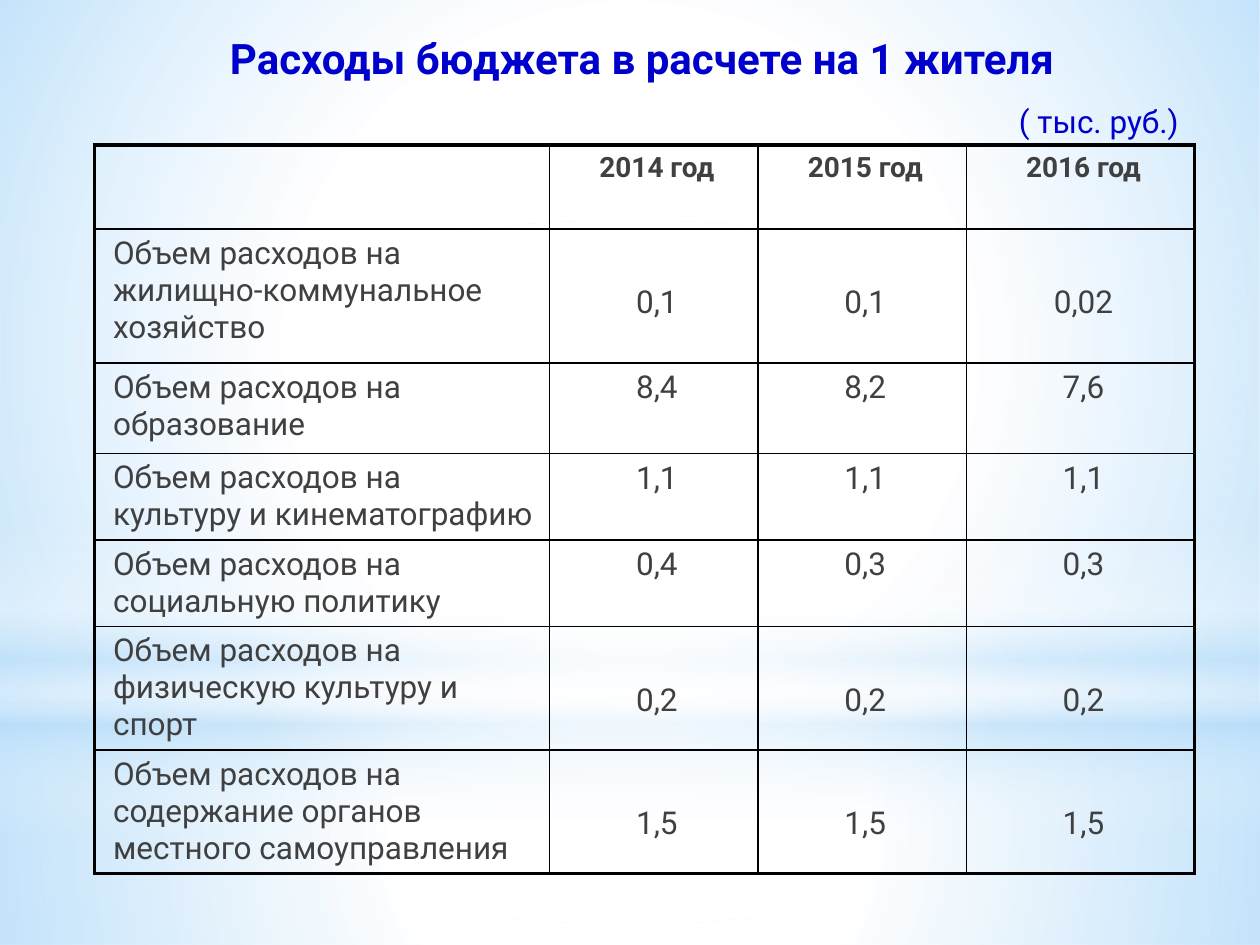
from typing import NamedTuple

from lxml import etree
from pptx import Presentation
from pptx.dml.color import RGBColor
from pptx.enum import shapes, text
from pptx.oxml import ns
from pptx.util import Cm, Pt

FONT = "Roboto"
BLUE = RGBColor(0x00, 0x00, 0xCC)
GREY = RGBColor(0x40, 0x40, 0x40)
BLACK = RGBColor(0x00, 0x00, 0x00)
WHITE = RGBColor(0xFF, 0xFF, 0xFF)
SKY = RGBColor(0xB4, 0xDC, 0xFA)

LEFT, CENTER = text.PP_ALIGN.LEFT, text.PP_ALIGN.CENTER
RECT, OVAL = shapes.MSO_SHAPE.RECTANGLE, shapes.MSO_SHAPE.OVAL
WIDTH, HEIGHT = 25.4, 19.05
HORIZON = 14.17
OUTER, INNER = 2.25, 1


class Stop(NamedTuple):
    position: int
    color: RGBColor
    opacity: int


class Glow(NamedTuple):
    kind: shapes.MSO_SHAPE
    top: float
    height: float
    stops: list[Stop]
    radial: bool = True


class Row(NamedTuple):
    height: float
    label: str
    values: tuple[str, ...]
    value_top: float = 0.13


GLOWS = [
    Glow(RECT, HORIZON, HEIGHT - HORIZON,
         [Stop(0, WHITE, 91), Stop(37, WHITE, 76), Stop(100, SKY, 79)]),
    Glow(RECT, 0, HORIZON,
         [Stop(0, WHITE, 89), Stop(48, WHITE, 62), Stop(100, SKY, 79)]),
    Glow(RECT, 10.46, 6.35,
         [Stop(0, WHITE, 0), Stop(29, WHITE, 30), Stop(45, SKY, 40),
          Stop(55, WHITE, 26), Stop(65, SKY, 60), Stop(100, WHITE, 0)], radial=False),
    Glow(OVAL, 4.45, HORIZON, [Stop(0, WHITE, 100), Stop(56, WHITE, 0)]),
]

COLUMNS = [9.18, 4.2, 4.2, 4.6]
LOWERED = 1.12
ROWS = [
    Row(1.7, "", ("2014 год", "2015 год", "2016 год")),
    Row(2.7, "Объем расходов на жилищно-коммунальное хозяйство", ("0,1", "0,1", "0,02"), LOWERED),
    Row(1.82, "Объем расходов на образование", ("8,4", "8,2", "7,6")),
    Row(1.74, "Объем расходов на культуру и кинематографию", ("1,1", "1,1", "1,1")),
    Row(1.74, "Объем расходов на социальную политику", ("0,4", "0,3", "0,3")),
    Row(2.49, "Объем расходов на физическую культуру и спорт", ("0,2", "0,2", "0,2"), LOWERED),
    Row(2.49, "Объем расходов на содержание органов местного самоуправления",
        ("1,5", "1,5", "1,5"), LOWERED),
]


def write(tf, content: str, *, size: float = 18, color: RGBColor = GREY,
          bold: bool = False, align=LEFT) -> None:
    p = tf.paragraphs[0]
    p.alignment = align
    r = p.add_run()
    r.text = content
    r.font.name, r.font.size, r.font.bold = FONT, Pt(size), bold
    r.font.color.rgb = color


def child(parent, tag: str, **attributes):
    return etree.SubElement(parent, ns.qn(tag), {k: str(v) for k, v in attributes.items()})


def draw_glow(slide, glow: Glow) -> None:
    sp = slide.shapes.add_shape(glow.kind, 0, Cm(glow.top), Cm(WIDTH), Cm(glow.height))
    sp.shadow.inherit = False
    sp.line.fill.background()
    sp.fill.gradient()
    grad = sp.fill._fill._gradFill
    for old in list(grad):
        grad.remove(old)
    stops = child(grad, "a:gsLst")
    for stop in glow.stops:
        gs = child(stops, "a:gs", pos=stop.position * 1000)
        color = child(gs, "a:srgbClr", val=stop.color)
        child(color, "a:alpha", val=stop.opacity * 1000)
    if glow.radial:
        center = child(grad, "a:path", path="circle")
        child(center, "a:fillToRect", l=50000, t=50000, r=50000, b=50000)
    else:
        child(grad, "a:lin", ang=90 * 60000, scaled=0)


def set_borders(cell, **widths: float) -> None:
    """Draw black cell borders; sides must come in the order L, R, T, B."""
    props = cell._tc.get_or_add_tcPr()
    for side, width in widths.items():
        line = child(props, f"a:ln{side}", w=Pt(width))
        child(child(line, "a:solidFill"), "a:srgbClr", val=BLACK)


def draw_table(slide, left: float, top: float) -> None:
    frame = slide.shapes.add_table(len(ROWS), len(COLUMNS), Cm(left), Cm(top),
                                   Cm(sum(COLUMNS)), Cm(sum(r.height for r in ROWS)))
    table = frame.table
    table.first_row = table.horz_banding = False
    for column, width in zip(table.columns, COLUMNS):
        column.width = Cm(width)
    last_row, last_col = len(ROWS) - 1, len(COLUMNS) - 1
    for i, row in enumerate(ROWS):
        table.rows[i].height = Cm(row.height)
        for j, content in enumerate((row.label, *row.values)):
            cell = table.cell(i, j)
            set_borders(cell, L=OUTER if j == 0 else INNER, R=OUTER if j == last_col else INNER,
                        T=OUTER if i == 0 else INNER, B=OUTER if i == last_row else INNER)
            cell.fill.background()
            cell.margin_left = Cm(0.38)
            if j:
                cell.margin_top = Cm(row.value_top)
            if content:
                write(cell.text_frame, content, size=18 if i else 16, bold=i == 0,
                      align=CENTER if j else LEFT)


def main() -> None:
    prs = Presentation()
    prs.slide_width, prs.slide_height = Cm(WIDTH), Cm(HEIGHT)
    s = prs.slides.add_slide(prs.slide_layouts[5])
    s.background.fill.solid()
    s.background.fill.fore_color.rgb = WHITE

    for glow in GLOWS:
        draw_glow(s, glow)

    title = s.shapes.title
    s.shapes._spTree.append(title._element)  # bring in front of the glows
    title.left, title.top, title.width, title.height = Cm(3.1), Cm(0.53), Cm(19.69), Cm(1.6)
    tf = title.text_frame
    tf.auto_size = text.MSO_AUTO_SIZE.NONE
    tf.vertical_anchor = text.MSO_ANCHOR.TOP
    write(tf, "Расходы бюджета в расчете на 1 жителя", size=24, color=BLUE, bold=True, align=CENTER)

    draw_table(s, 1.9, 2.92)

    unit = s.shapes.add_textbox(Cm(20.29), Cm(1.93), Cm(3.99), Cm(1.02))
    unit.text_frame.word_wrap = True
    write(unit.text_frame, "( тыс. руб.)", color=BLUE)

    prs.save("out.pptx")


if __name__ == "__main__":
    main()
